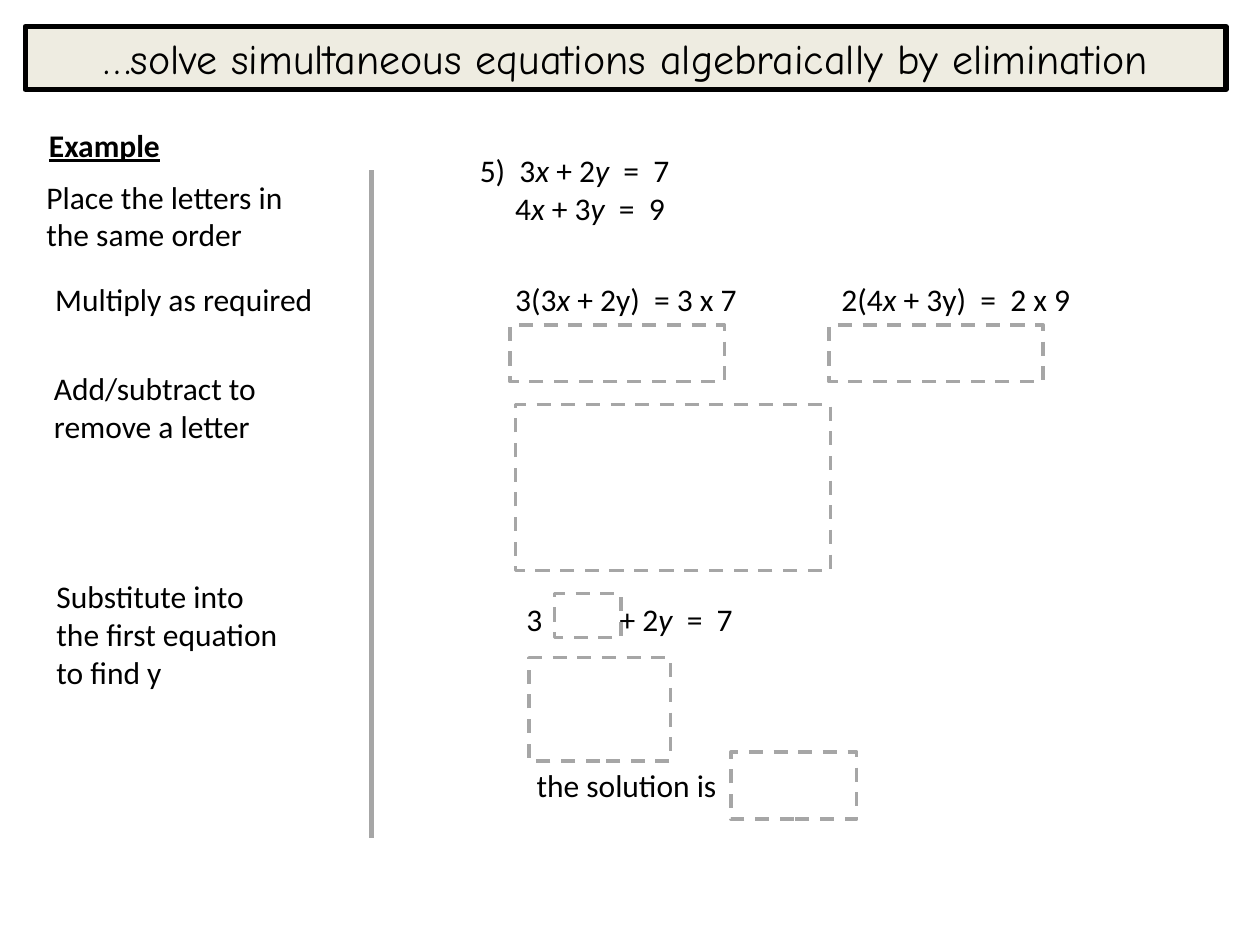
from lxml import etree
from pptx import Presentation
from pptx.dml.color import RGBColor
from pptx.enum import dml, shapes, text
from pptx.oxml.ns import qn
from pptx.util import Inches, Pt

COLORS = {"ink": "000000", "banner": "EEECE1", "guide": "A6A6A6"}
BODY = {"name": "Calibri", "size": Pt(18)}
HEADING = {**BODY, "bold": True, "underline": True}
BANNER = {"name": "Comic Neue", "size": Pt(24)}

TITLE = "…solve simultaneous equations algebraically by elimination"
TITLE_BOX = (0.2, 0.21, 9.53, 0.5)
EXAMPLE = ("Example", (0.29, 0.95, 2.5, 0.4))
STEPS = [
    ("Place the letters in the same order", (0.27, 1.36, 2.16, 0.71)),
    ("Multiply as required", (0.34, 2.17, 2.3, 0.4)),
    ("Add/subtract to remove a letter", (0.33, 2.88, 1.91, 0.71)),
    ("Substitute into the first equation to find y", (0.35, 4.53, 2.03, 1.01)),
]
# Asterisks enclose italic letters; each line is (indent, wording).
WORKING = [
    ([(0.06, "5)  3*x *+ 2*y*  =  7"), (0.34, "4*x* + 3*y*  =  9")],
     (3.65, 1.15, 1.96, 0.71), True),
    ([(0, "3(3*x *+ 2y)  = 3 x 7")], (3.99, 2.17, 2.04, 0.4), True),
    ([(0, "2(4*x *+ 3y)  =  2 x 9")], (6.58, 2.17, 2.16, 0.4), False),
    ([(0, "3\t+ 2*y*  =  7")], (4.08, 4.71, 5, 0.4), True),
    ([(0, "the solution is")], (4.16, 6.03, 1.65, 0.4), False),
]
GAP_TAB = 0.74
MULTIPLIED = [(left, 2.58, 1.7, 0.45) for left in (4.05, 6.58)]
ANSWERS = MULTIPLIED + [
    (4.09, 3.21, 2.5, 1.32),
    (4.4, 4.71, 0.53, 0.35),
    (4.2, 5.22, 1.12, 0.82),
    (5.8, 5.97, 1, 0.53),
]
DIVIDER = (2.95, 1.35, 2.95, 6.65)


def inches(values):
    return [Inches(value) for value in values]


def color(key):
    return RGBColor.from_string(COLORS[key])


def write(paragraph, wording, style):
    for index, part in enumerate(wording.split("*")):
        if part:
            run = paragraph.add_run()
            run.text = part
            run.font.color.rgb = color("ink")
            for key, value in {**style, "italic": index % 2 == 1}.items():
                setattr(run.font, key, value)


def add_text(slide, lines, place, style=BODY, wrap=True):
    frame = slide.shapes.add_textbox(*inches(place)).text_frame
    frame.word_wrap = wrap
    for index, (indent, wording) in enumerate(lines):
        paragraph = frame.add_paragraph() if index else frame.paragraphs[0]
        properties = paragraph._p.get_or_add_pPr()
        properties.set("marL", str(Inches(indent)))
        if "\t" in wording:
            tabs = etree.SubElement(properties, qn("a:tabLst"))
            etree.SubElement(tabs, qn("a:tab"), pos=str(Inches(GAP_TAB)), algn="l")
        write(paragraph, wording, style)


def outline(line, key, width):
    line.color.rgb = color(key)
    line.width = Pt(width)


def add_rectangle(slide, place, line_color, width):
    rectangle = slide.shapes.add_shape(shapes.MSO_SHAPE.RECTANGLE, *inches(place))
    rectangle.shadow.inherit = False
    rectangle.fill.background()
    outline(rectangle.line, line_color, width)
    return rectangle


def main():
    deck = Presentation()
    deck.slide_width, deck.slide_height = inches((10, 7.5))
    slide = deck.slides.add_slide(deck.slide_layouts[6])

    banner = add_rectangle(slide, TITLE_BOX, "ink", 3)
    banner.fill.solid()
    banner.fill.fore_color.rgb = color("banner")
    banner.text_frame.word_wrap = True
    heading = banner.text_frame.paragraphs[0]
    heading.alignment = text.PP_ALIGN.CENTER
    write(heading, TITLE, BANNER)

    example, example_box = EXAMPLE
    add_text(slide, [(0, example)], example_box, HEADING)
    for step, place in STEPS:
        add_text(slide, [(0, step)], place)
    for lines, place, wrap in WORKING:
        add_text(slide, lines, place, wrap=wrap)

    divider = slide.shapes.add_connector(shapes.MSO_CONNECTOR.STRAIGHT, *inches(DIVIDER))
    outline(divider.line, "guide", 3)
    etree.SubElement(divider._element.spPr, qn("a:effectLst"))

    for place in ANSWERS:
        answer = add_rectangle(slide, place, "guide", 2)
        answer.line.dash_style = dml.MSO_LINE.DASH

    deck.save("out.pptx")


if __name__ == "__main__":
    main()
